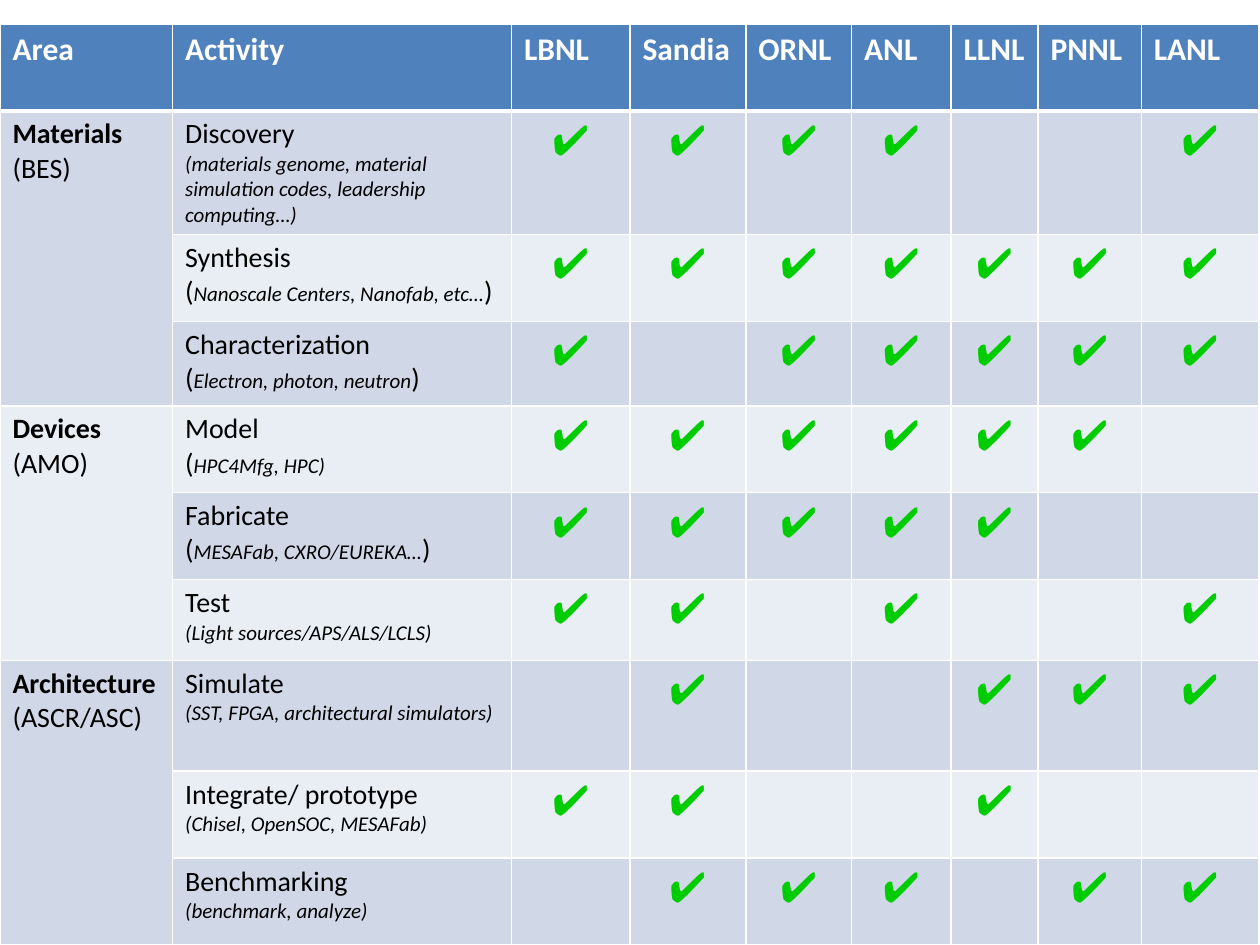
from dataclasses import dataclass

import pptx
import pptx.dml.color
import pptx.enum.text
import pptx.oxml
import pptx.oxml.ns
import pptx.util
from pptx.util import Inches

COLORS = {
    "header": "4F81BD",
    "dark_band": "D0D8E8",
    "light_band": "E9EDF4",
    "white": "FFFFFF",
    "black": "000000",
    "check": "00CD01",
}
LABS = ["LBNL", "Sandia", "ORNL", "ANL", "LLNL", "PNNL", "LANL"]
COLUMN_WIDTHS = [1.37, 2.69, 0.94, 0.92, 0.84, 0.79, 0.69, 0.82, 0.93]
HEADER_HEIGHT = 0.69
ROWS_PER_AREA = 3


@dataclass
class Activity:
    """One body row; labs holds a letter x for each lab taking part."""
    name: str
    detail: str
    labs: str
    height: float = 0.69
    opening: str = ""
    closing: str = ""


AREAS = [("Materials", "(BES)"), ("Devices", "(AMO)"), ("Architecture", "(ASCR/ASC)")]
ACTIVITIES = [
    Activity("Discovery",
             "(materials genome, material simulation codes, leadership computing…)",
             "xxxx--x", height=0.98),
    Activity("Synthesis", "Nanoscale Centers, Nanofab, etc…", "xxxxxxx",
             opening="(", closing=")"),
    Activity("Characterization", "Electron, photon, neutron", "x-xxxxx",
             height=0.67, opening="(", closing=")"),
    Activity("Model", "HPC4Mfg, HPC)", "xxxxxx-", opening="("),
    Activity("Fabricate", "MESAFab, CXRO/EUREKA…", "xxxxx--",
             opening="(", closing=")"),
    Activity("Test", "(Light sources/APS/ALS/LCLS)", "xx-x--x", height=0.64),
    Activity("Simulate", "(SST, FPGA, architectural simulators)", "-x--xxx", height=0.88),
    Activity("Integrate/ prototype", "(Chisel, OpenSOC, MESAFab)", "xx--x--"),
    Activity("Benchmarking", "(benchmark, analyze)", "-xxx-xx"),
]


def add_text(para, text: str, *, size: int = 16, font: str = "Calibri",
             color: str = "black", bold: bool = False, italic: bool = False) -> None:
    span = para.add_run()
    span.text = text
    span.font.size = pptx.util.Pt(size)
    span.font.name = font
    span.font.bold = bold
    span.font.italic = italic
    span.font.color.rgb = pptx.dml.color.RGBColor.from_string(COLORS[color])


def style_cell(cell, fill: str, top: int = 1, bottom: int = 1) -> None:
    """Add white borders, widths in points, and then the fill that must follow them."""
    properties = cell._tc.get_or_add_tcPr()
    for side, width in (("L", 1), ("R", 1), ("T", top), ("B", bottom)):
        properties.append(pptx.oxml.parse_xml(
            f'<a:ln{side} {pptx.oxml.ns.nsdecls("a")} w="{pptx.util.Pt(width)}">'
            f'<a:solidFill><a:srgbClr val="{COLORS["white"]}"/></a:solidFill>'
            f'</a:ln{side}>'))
    cell.fill.solid()
    cell.fill.fore_color.rgb = pptx.dml.color.RGBColor.from_string(COLORS[fill])


def fill_header(table) -> None:
    for column, title in enumerate(["Area", "Activity", *LABS]):
        cell = table.cell(0, column)
        style_cell(cell, "header", bottom=3)
        add_text(cell.text_frame.paragraphs[0], title, size=18, color="white", bold=True)


def fill_activity(table, row: int, activity: Activity) -> None:
    band = "dark_band" if row % 2 else "light_band"
    for column in range(len(COLUMN_WIDTHS)):
        style_cell(table.cell(row, column), band, top=3 if row == 1 else 1)

    frame = table.cell(row, 1).text_frame
    add_text(frame.paragraphs[0], activity.name)
    para = frame.add_paragraph()
    if activity.opening:
        add_text(para, activity.opening)
    add_text(para, activity.detail, size=12, italic=True)
    if activity.closing:
        add_text(para, activity.closing)

    for column, mark in enumerate(activity.labs, start=2):
        if mark == "x":
            para = table.cell(row, column).text_frame.paragraphs[0]
            para.alignment = pptx.enum.text.PP_ALIGN.CENTER
            add_text(para, "✔", size=24, font="Arial", color="check")


def fill_area(table, first_row: int, name: str, office: str) -> None:
    cell = table.cell(first_row, 0)
    cell.merge(table.cell(first_row + ROWS_PER_AREA - 1, 0))
    add_text(cell.text_frame.paragraphs[0], name, bold=True)
    add_text(cell.text_frame.add_paragraph(), office)


def main() -> None:
    deck = pptx.Presentation()
    deck.slide_width, deck.slide_height = Inches(10), Inches(7.5)
    page = deck.slides.add_slide(deck.slide_layouts[6])

    heights = [HEADER_HEIGHT] + [activity.height for activity in ACTIVITIES]
    table = page.shapes.add_table(
        len(heights), len(COLUMN_WIDTHS), Inches(0), Inches(0.19),
        Inches(sum(COLUMN_WIDTHS)), Inches(sum(heights))).table
    for column, width in zip(table.columns, COLUMN_WIDTHS):
        column.width = Inches(width)
    for row, height in zip(table.rows, heights):
        row.height = Inches(height)

    fill_header(table)
    for row, activity in enumerate(ACTIVITIES, start=1):
        fill_activity(table, row, activity)
    for index, (name, office) in enumerate(AREAS):
        fill_area(table, 1 + index * ROWS_PER_AREA, name, office)

    deck.save("out.pptx")


if __name__ == "__main__":
    main()
